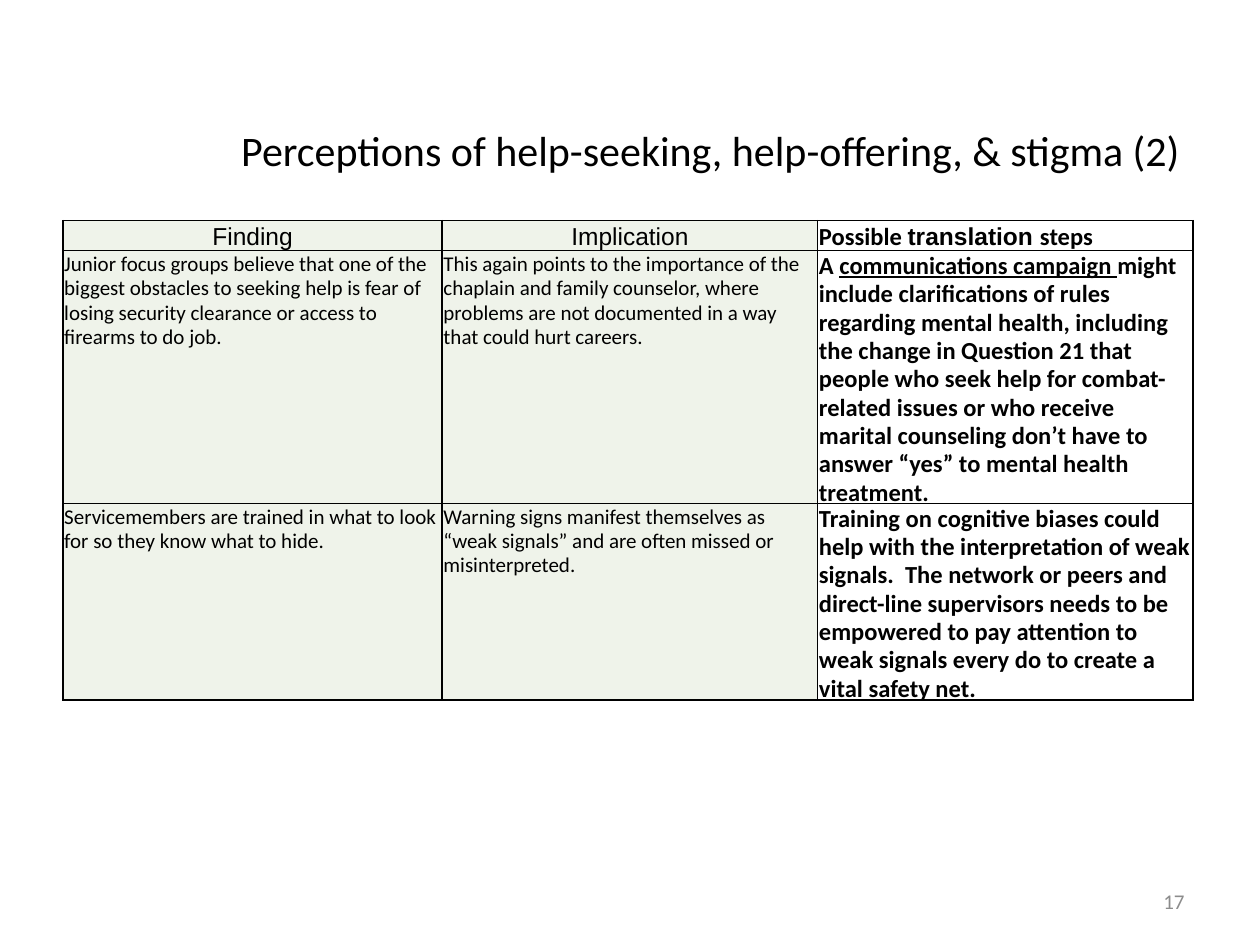
from pptx import Presentation
from pptx.dml.color import RGBColor
from pptx.enum.text import MSO_ANCHOR as Anchor, PP_ALIGN as Align
from pptx.oxml import parse_xml
from pptx.oxml.ns import nsdecls
from pptx.util import Inches, Pt

BLACK = RGBColor(0x00, 0x00, 0x00)
INK = RGBColor(0x01, 0x01, 0x01)
GRAY = RGBColor(0x8C, 0x8C, 0x8C)
PALE_GREEN = RGBColor(0xEF, 0xF3, 0xEA)

TITLE = "Perceptions of help-seeking, help-offering, & stigma (2)"
HEADER = [["Finding"], ["Implication"], ["Possible ", "translation ", "steps"]]
BODY = [
    [
        ["Junior focus groups believe that one of the biggest obstacles to seeking help "
         "is fear of losing security clearance or access to firearms to do job."],
        ["This again points to the importance of the chaplain and family counselor, "
         "where problems are not documented in a way that could hurt careers."],
        ["A ", "communications campaign ",
         "might include clarifications of rules regarding mental health, including the "
         "change in Question 21 that people who seek help for combat-related issues or "
         "who receive marital counseling don’t have to answer “yes” to mental health "
         "treatment."],
    ],
    [
        ["Servicemembers are trained in what to look for so they know what to hide."],
        ["Warning signs manifest themselves as “weak signals” and are often missed or "
         "misinterpreted."],
        ["Training on cognitive biases could help with the interpretation of weak "
         "signals.  The network or peers and direct-line supervisors needs to be "
         "empowered to pay attention to weak signals every do to create a vital safety "
         "net."],
    ],
]


def write(para, text, size=12, font="Calibri", color=BLACK, bold=False,
          underline=False, align=Align.LEFT):
    para.alignment = align
    span = para.add_run()
    span.text = text
    span.font.size = Pt(size)
    span.font.name = font
    span.font.color.rgb = color
    span.font.bold = bold
    span.font.underline = underline


deck = Presentation()
deck.slide_width, deck.slide_height = Inches(10), Inches(7.5)
slide = deck.slides.add_slide(deck.slide_layouts[6])

labels = [
    ((1.14, 0.56, 9, 1.25), TITLE, dict(size=24, align=Align.CENTER)),
    ((7.17, 6.95, 2.33, 0.4), "17", dict(color=GRAY, align=Align.RIGHT)),
]
for place, text, style in labels:
    box = slide.shapes.add_textbox(*map(Inches, place))
    box.text_frame.word_wrap = True
    box.text_frame.vertical_anchor = Anchor.MIDDLE
    write(box.text_frame.paragraphs[0], text, **style)

widths = [3.01, 2.98, 2.98]
heights = [0.24, 0.64, 0.84]
rows = [HEADER] + BODY
table = slide.shapes.add_table(
    len(rows), len(widths), Inches(0.5), Inches(1.75),
    Inches(sum(widths)), Inches(sum(heights))).table
table.first_row = False
table.horz_banding = False
for column, width in zip(table.columns, widths):
    column.width = Inches(width)
for row, height in zip(table.rows, heights):
    row.height = Inches(height)

for row_index, row in enumerate(rows):
    for column_index, spans in enumerate(row):
        cell = table.cell(row_index, column_index)
        is_header = row_index == 0
        is_step = column_index == 2
        cell.margin_left = cell.margin_right = cell.margin_top = Inches(0.01)
        cell.margin_bottom = 0
        cell.vertical_anchor = Anchor.BOTTOM if is_header else Anchor.TOP

        properties = cell._tc.get_or_add_tcPr()
        for side in ("lnL", "lnR", "lnT", "lnB"):
            properties.append(parse_xml(
                f'<a:{side} {nsdecls("a")} w="{Pt(1)}"><a:solidFill>'
                f'<a:srgbClr val="{BLACK}"/></a:solidFill></a:{side}>'))
        if is_step:
            cell.fill.background()
        else:
            cell.fill.solid()
            cell.fill.fore_color.rgb = PALE_GREEN

        para = cell.text_frame.paragraphs[0]
        para.line_spacing = 0.95
        for text in spans:
            in_arial = is_header and (not is_step or text == "translation ")
            write(para, text,
                  size=14 if is_header or is_step else 12,
                  font="Arial" if in_arial else "Calibri",
                  color=INK if is_step and not is_header else BLACK,
                  bold=is_step,
                  underline=text == "communications campaign ",
                  align=Align.CENTER if is_header and not is_step else Align.LEFT)

deck.save("out.pptx")
